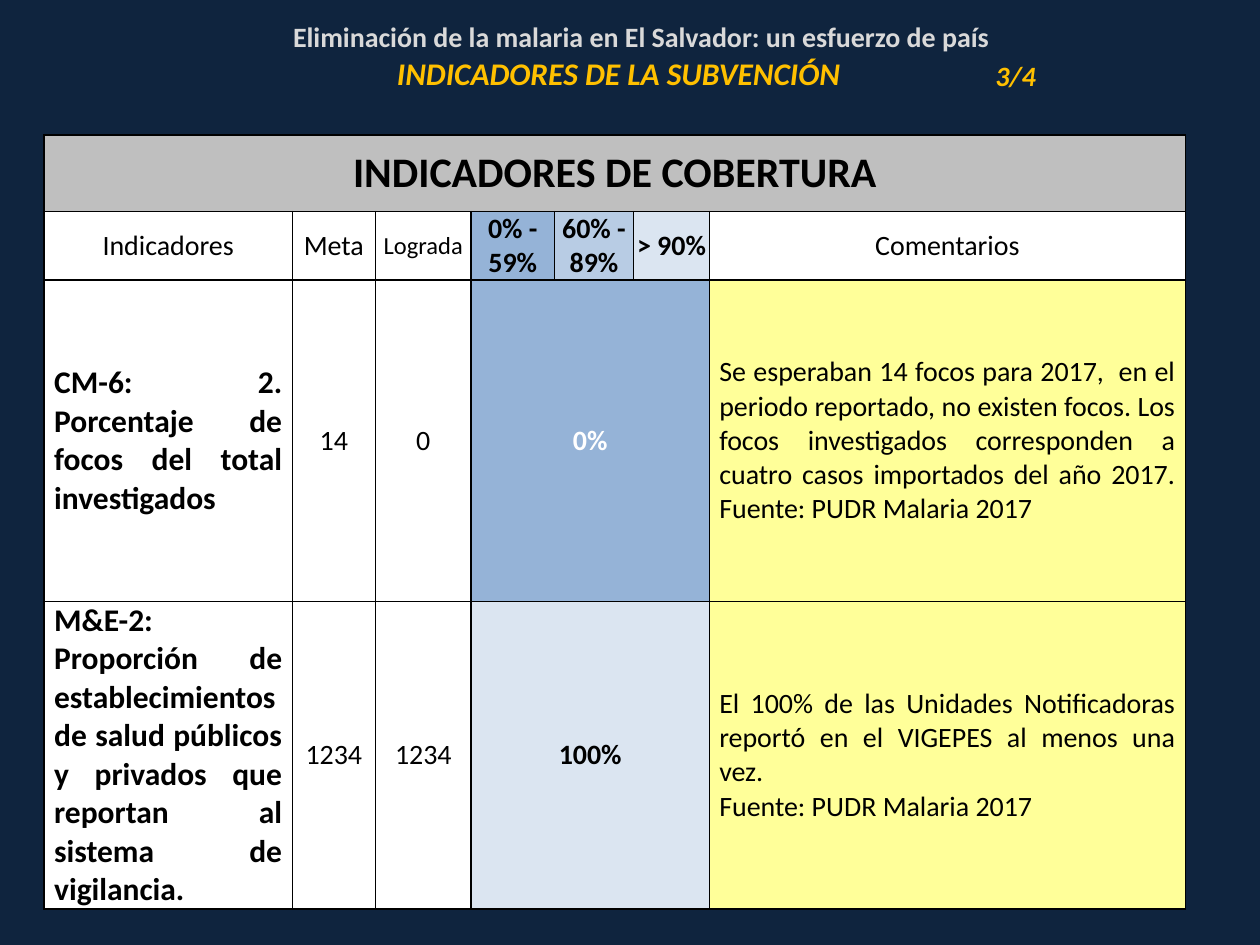
from collections import namedtuple
from dataclasses import dataclass

from lxml import etree
from pptx import Presentation
from pptx.dml.color import RGBColor
from pptx.enum.text import MSO_ANCHOR, PP_ALIGN
from pptx.oxml.ns import qn
from pptx.util import Inches, Pt

LEFT, CENTER, JUSTIFY = PP_ALIGN.LEFT, PP_ALIGN.CENTER, PP_ALIGN.JUSTIFY
MIDDLE, BOTTOM = MSO_ANCHOR.MIDDLE, MSO_ANCHOR.BOTTOM
PAGE_WIDTH, PAGE_HEIGHT = 10, 7.5
PLAIN_TABLE_STYLE = "{2D5ABB26-0587-4C30-8999-92F81FD0307C}"

Box = namedtuple("Box", "left top width height")


@dataclass(frozen=True)
class Theme:
    font: str = "Calibri"
    navy: str = "0F243E"
    black: str = "000000"
    white: str = "FFFFFF"
    silver: str = "D9D9D9"
    gold: str = "FFC000"
    gray: str = "BFBFBF"
    low: str = "95B3D7"
    medium: str = "B8CCE4"
    high: str = "DBE5F1"
    comment: str = "FFFF99"
    heading: int = 24
    large: int = 18
    normal: int = 16
    small: int = 14
    border: int = 1
    inset: float = 0.08


THEME = Theme()


def add_grid(page, box, columns, rows):
    """Add an unstyled table whose column and row weights share out the box."""
    frame = page.shapes.add_table(len(rows), len(columns), *map(Inches, box))
    table = frame.table
    table.first_row = table.horz_banding = False
    frame.element.find(".//" + qn("a:tableStyleId")).text = PLAIN_TABLE_STYLE
    for column, weight in zip(table.columns, columns):
        column.width = Inches(box.width * weight / sum(columns))
    for row, weight in zip(table.rows, rows):
        row.height = Inches(box.height * weight / sum(rows))
    for cell in table.iter_cells():
        set_margins(cell, 0)
        cell.fill.background()
    return frame


def set_margins(cell, side):
    margins = {"margin_left": side, "margin_right": side,
               "margin_top": 0, "margin_bottom": 0}
    for name, value in margins.items():
        setattr(cell, name, Inches(value))


def fill_cell(cell, text, fill=None, color=THEME.black, align=CENTER,
              anchor=MIDDLE, side=0, **font):
    """Write text, one paragraph a line, and format the cell around it."""
    set_margins(cell, side)
    cell.vertical_anchor = anchor
    if fill:
        cell.fill.solid()
        cell.fill.fore_color.rgb = RGBColor.from_string(fill)
    formats = {"name": THEME.font, "size": THEME.normal, "bold": False, **font}
    formats["size"] = Pt(formats["size"])
    cell.text = text
    for para in cell.text_frame.paragraphs:
        para.alignment = align
        for span in para.runs:
            for name, value in formats.items():
                setattr(span.font, name, value)
            span.font.color.rgb = RGBColor.from_string(color)


def draw_borders(frame):
    for properties in frame.element.iter(qn("a:tcPr")):
        for index, side in enumerate(("lnL", "lnR", "lnT", "lnB")):
            line = etree.Element(qn("a:" + side), w=str(Pt(THEME.border)))
            solid = etree.SubElement(line, qn("a:solidFill"))
            etree.SubElement(solid, qn("a:srgbClr"), val=THEME.black)
            properties.insert(index, line)


def add_header(page, box):
    table = add_grid(page, box, (1.3, 5.98, 1.66), (0.31, 0.3)).table
    table.cell(0, 0).merge(table.cell(0, 2))
    fill_cell(table.cell(0, 0),
              "Eliminación de la malaria en El Salvador: un esfuerzo de país",
              color=THEME.silver, anchor=BOTTOM, bold=True)
    accent = {"color": THEME.gold, "anchor": BOTTOM, "bold": True, "italic": True}
    fill_cell(table.cell(1, 1), "INDICADORES DE LA SUBVENCIÓN",
              size=THEME.large, **accent)
    fill_cell(table.cell(1, 2), "3/4", align=LEFT, **accent)


def add_coverage_table(page, box):
    frame = add_grid(page, box, (1.97, 0.66, 0.76, 0.66, 0.63, 0.6, 3.78),
                     (0.61, 0.54, 2.55, 2.44))
    table = frame.table
    table.cell(0, 0).merge(table.cell(0, 6))
    fill_cell(table.cell(0, 0), "INDICADORES DE COBERTURA", THEME.gray,
              size=THEME.heading, bold=True)

    headings = (
        ("Indicadores", THEME.white, {}),
        ("Meta", THEME.white, {}),
        ("Lograda", THEME.white, {"size": THEME.small}),
        ("0% - 59%", THEME.low, {"bold": True}),
        ("60% - 89%", THEME.medium, {"bold": True}),
        ("> 90%", THEME.high, {"bold": True}),
        ("Comentarios", THEME.white, {}),
    )
    for column, (text, fill, font) in enumerate(headings):
        fill_cell(table.cell(1, column), text, fill, **font)

    indicators = (
        ("CM-6: 2. Porcentaje de focos del total investigados",
         "14", "0", "0%", THEME.low, THEME.white,
         "Se esperaban 14 focos para 2017,  en el periodo reportado, no existen "
         "focos. Los focos investigados corresponden a cuatro casos importados "
         "del año 2017. Fuente: PUDR Malaria 2017"),
        ("M&E-2: Proporción de establecimientos de salud públicos y privados "
         "que reportan al sistema de vigilancia.",
         "1234", "1234", "100%", THEME.high, THEME.black,
         "El 100% de las Unidades Notificadoras reportó en el VIGEPES al menos "
         "una vez.\nFuente: PUDR Malaria 2017"),
    )
    for row, indicator in enumerate(indicators, start=2):
        name, target, achieved, rate, rate_fill, rate_color, comment = indicator
        table.cell(row, 3).merge(table.cell(row, 5))
        cells = (
            (0, name, THEME.white,
             {"align": JUSTIFY, "size": THEME.large, "bold": True}),
            (1, target, THEME.white, {}),
            (2, achieved, THEME.white, {}),
            (3, rate, rate_fill, {"color": rate_color, "bold": True}),
            (6, comment, THEME.comment, {"align": JUSTIFY}),
        )
        for column, text, fill, formats in cells:
            fill_cell(table.cell(row, column), text, fill,
                      side=THEME.inset, **formats)
    draw_borders(frame)


def main():
    deck = Presentation()
    deck.slide_width, deck.slide_height = Inches(PAGE_WIDTH), Inches(PAGE_HEIGHT)
    page = deck.slides.add_slide(deck.slide_layouts.get_by_name("Blank"))
    page.background.fill.solid()
    page.background.fill.fore_color.rgb = RGBColor.from_string(THEME.navy)
    add_coverage_table(page, Box(0.35, 1.07, 9.06, 6.14))
    add_header(page, Box(0.62, 0.13, 8.94, 0.61))
    deck.save("out.pptx")


if __name__ == "__main__":
    main()
